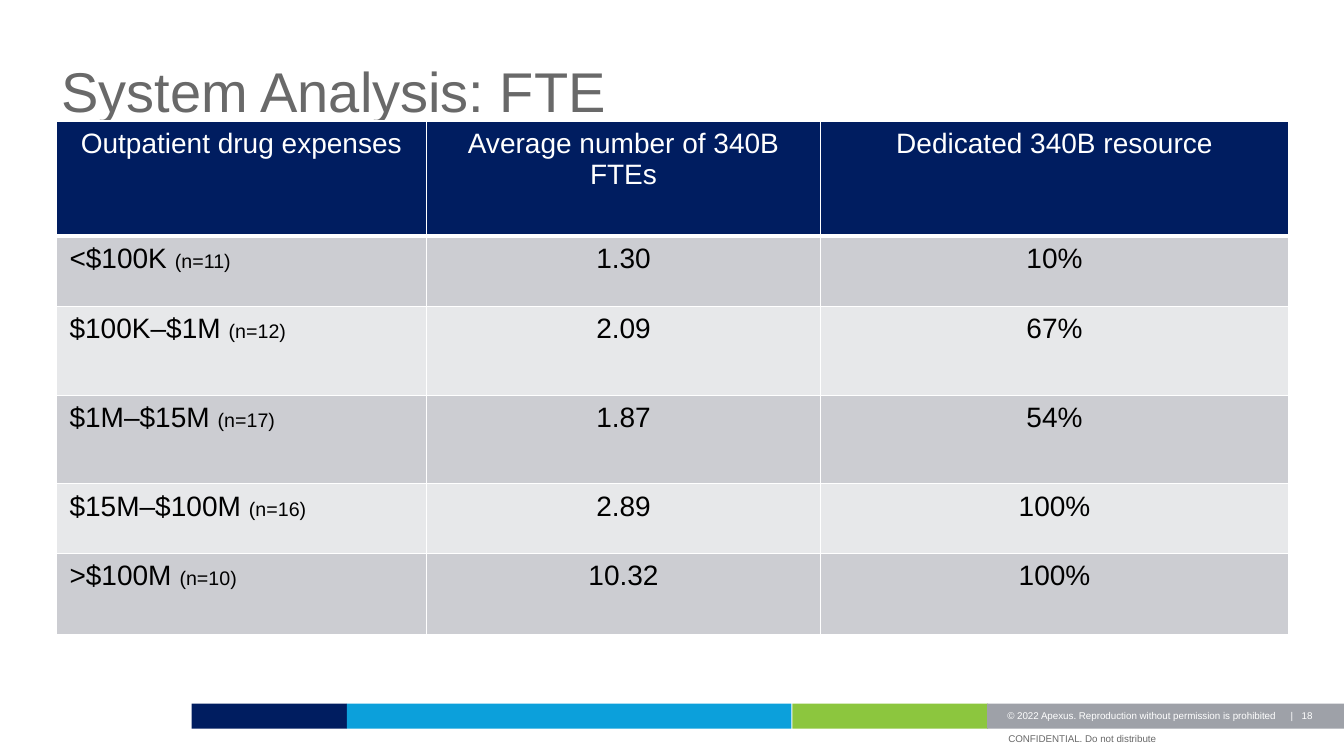
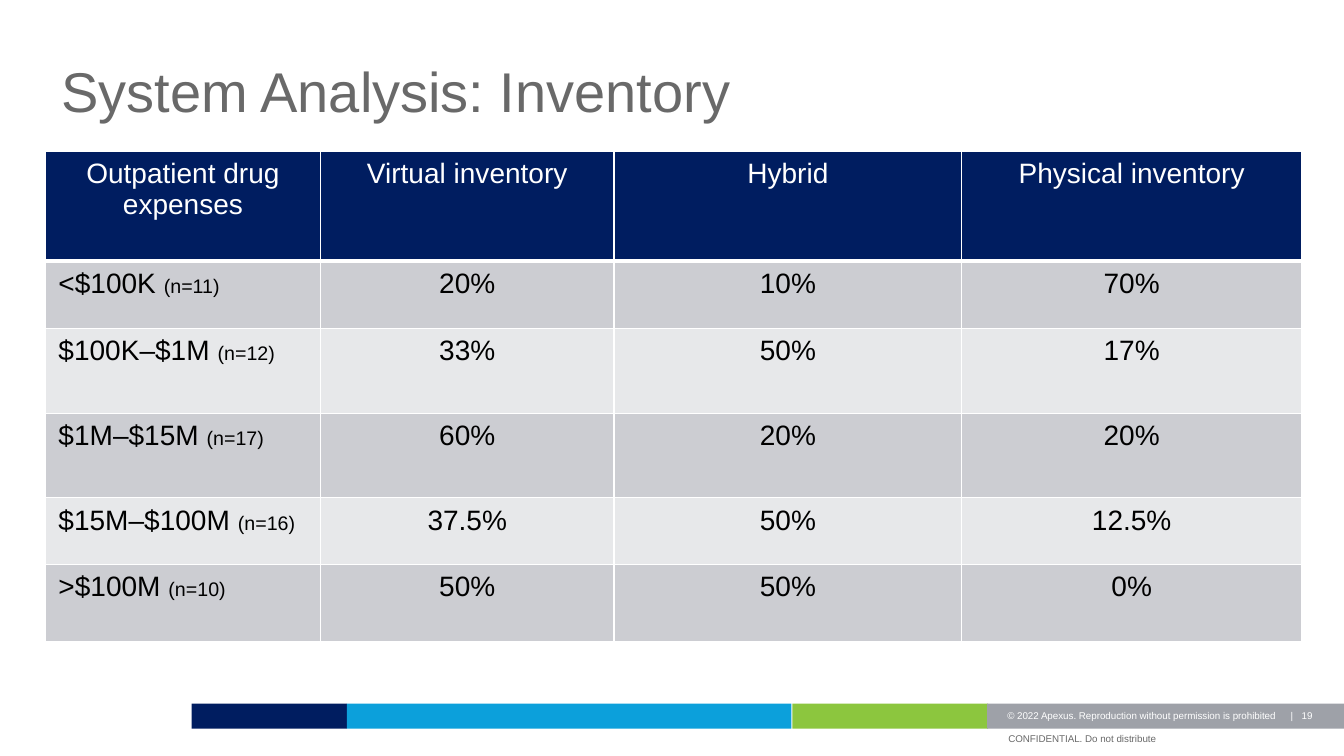
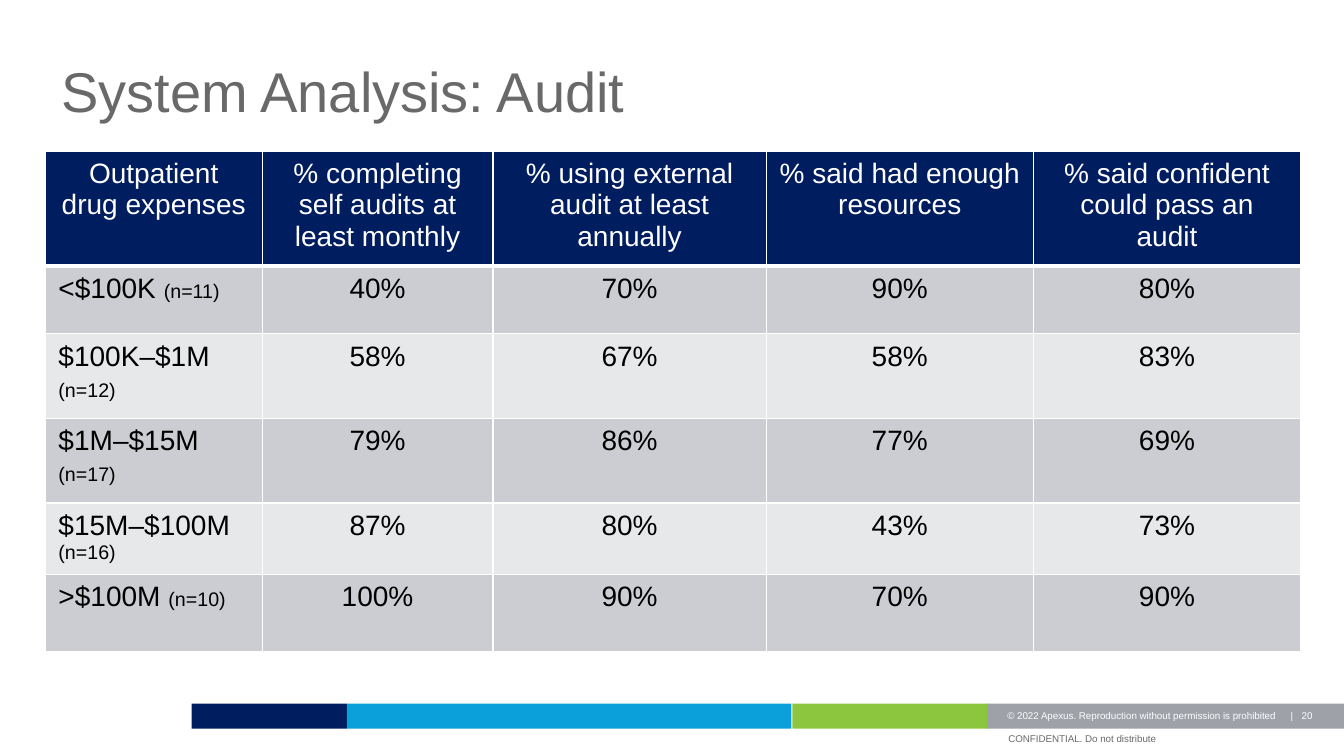
import pptx
import pptx.util
import pptx.dml.color
import pptx.enum.shapes
import pptx.enum.text
import pptx.oxml.ns
from lxml import etree

Inches, Pt = pptx.util.Inches, pptx.util.Pt
ALIGN = pptx.enum.text.PP_ALIGN
ANCHOR = pptx.enum.text.MSO_ANCHOR
qn = pptx.oxml.ns.qn

# Shared look
COLORS = {
    "navy": "001D60", "blue": "0CA0DB", "green": "8CC63E", "gray": "9EA1A8",
    "text": "696969", "white": "FFFFFF", "black": "000000",
    "band_dark": "CCCDD2", "band_light": "E7E8EA",
}
FONT = "Arial"
BANDS = [  # colour, left, width
    ("navy", 1.9, 1.54), ("green", 7.86, 1.94),
    ("blue", 3.44, 4.41), ("gray", 9.79, 3.54),
]
FOOTERS = [  # text, left, top, colour
    ("© 2022 Apexus. Reproduction without permission is prohibited", 9.99, 7, "white"),
    ("CONFIDENTIAL. Do not distribute", 10, 7.23, "text"),
]
FIRST_PAGE = 18

# Content
EXPENSES = [  # range, sample, full-size space after the sample
    ("<$100K ", "(n=11)", ""),
    ("$100K–$1M ", "(n=12)", " "),
    ("$1M–$15M ", "(n=17)", " "),
    ("$15M–$100M ", "(n=16)", ""),
    (">$100M ", "(n=10)", ""),
]
ROW_HEIGHTS = [1.09, 0.67, 0.84, 0.84, 0.66, 0.77]
SLIDES = [
    {
        "title": "System Analysis: FTE",
        "at": (0.56, 1.2),
        "widths": [3.67, 3.91, 4.64],
        "heights": [1.14, 0.7, 0.88, 0.88, 0.69, 0.81],
        "measures": {
            "Average number of 340B FTEs": ["1.30", "2.09", "1.87", "2.89", "10.32"],
            "Dedicated 340B resource": ["10%", "67%", "54%", "100%", "100%"],
        },
    },
    {
        "title": "System Analysis: Inventory",
        "at": (0.45, 1.5),
        "widths": [2.73, 2.91, 3.45, 3.37],
        "heights": ROW_HEIGHTS,
        "measures": {
            "Virtual inventory": ["20%", "33%", "60%", "37.5%", "50%"],
            "Hybrid": ["10%", "50%", "20%", "50%", "50%"],
            "Physical inventory": ["70%", "17%", "20%", "12.5%", "0%"],
        },
    },
    {
        "title": "System Analysis: Audit",
        "at": (0.45, 1.5),
        "widths": [2.15, 2.29, 2.71, 2.65, 2.65],
        "heights": ROW_HEIGHTS,
        "measures": {
            "% completing self audits at least monthly": ["40%", "58%", "79%", "87%", "100%"],
            "% using external audit at least annually": ["70%", "67%", "86%", "80%", "90%"],
            "% said had enough resources": ["90%", "58%", "77%", "43%", "70%"],
            "% said confident could pass an audit": ["80%", "83%", "69%", "73%", "90%"],
        },
    },
]


def rgb(name):
    return pptx.dml.color.RGBColor.from_string(COLORS[name])


def write(frame, *runs, size, color, align=ALIGN.LEFT, spacing=None, tab=None):
    """Fill the first paragraph; a run is a text or a (text, size) pair."""
    paragraph = frame.paragraphs[0]
    paragraph.alignment = align
    if spacing:
        paragraph.line_spacing = spacing
    if tab:
        stops = etree.SubElement(paragraph._p.get_or_add_pPr(), qn("a:tabLst"))
        etree.SubElement(stops, qn("a:tab"), pos=str(Inches(tab)), algn="l")
    for item in runs:
        text, run_size = item if isinstance(item, tuple) else (item, size)
        run = paragraph.add_run()
        run.text = text
        run.font.name = FONT
        run.font.size = Pt(run_size)
        run.font.bold = False
        run.font.color.rgb = rgb(color)


def add_box(slide, left, top, width, height):
    box = slide.shapes.add_textbox(Inches(left), Inches(top), Inches(width), Inches(height))
    box.text_frame.word_wrap = True
    return box


def set_up_layout(layout):
    """Place the title and drop the date, footer and number placeholders."""
    for holder in list(layout.placeholders):
        if holder.placeholder_format.idx:
            layout.shapes.element.remove(holder.element)
        else:
            holder.left, holder.top = Inches(0.51), Inches(0.59)
            holder.width, holder.height = Inches(12.31), Inches(1)


def add_bands(slide, layout):
    """Draw the bands and footers on a slide, then move them to its layout."""
    parts = []
    for color, left, width in BANDS:
        band = slide.shapes.add_shape(
            pptx.enum.shapes.MSO_SHAPE.RECTANGLE,
            Inches(left), Inches(6.98), Inches(width), Inches(0.25))
        band.shadow.inherit = False
        band.fill.solid()
        band.fill.fore_color.rgb = rgb(color)
        band.line.fill.background()
        parts.append(band)
    for text, left, top, color in FOOTERS:
        footer = add_box(slide, left, top, 3.35, 0.16)
        frame = footer.text_frame
        frame.margin_left = frame.margin_right = frame.margin_top = frame.margin_bottom = 0
        frame.vertical_anchor = ANCHOR.BOTTOM
        write(frame, text, size=7, color=color)
        parts.append(footer)
    for part in parts:
        layout.shapes.element.append(part.element)


def set_borders(cell, **widths):
    """Add white borders; they must precede the cell fill."""
    properties = cell._tc.get_or_add_tcPr()
    for side, width in widths.items():
        line = etree.SubElement(properties, qn("a:" + side), w=str(Pt(width)))
        fill = etree.SubElement(line, qn("a:solidFill"))
        etree.SubElement(fill, qn("a:srgbClr"), val=COLORS["white"])


def format_cell(cell, row):
    if row == 0:
        set_borders(cell, lnL=1, lnR=1, lnT=1, lnB=3)
    else:
        set_borders(cell, lnL=1, lnR=1, lnB=1)
    cell.fill.solid()
    cell.fill.fore_color.rgb = rgb(
        "navy" if row == 0 else "band_dark" if row % 2 else "band_light")
    cell.margin_left = cell.margin_right = Inches(0.13)
    cell.margin_top = cell.margin_bottom = Inches(0.07)


def add_results(slide, content):
    widths, heights = content["widths"], content["heights"]
    left, top = content["at"]
    table = slide.shapes.add_table(
        len(heights), len(widths), Inches(left), Inches(top),
        Inches(sum(widths)), Inches(sum(heights))).table
    table.horz_banding = False
    for column, width in zip(table.columns, widths):
        column.width = Inches(width)
    for row, height in zip(table.rows, heights):
        row.height = Inches(height)

    headers = ["Outpatient drug expenses", *content["measures"]]
    records = [headers, *zip(EXPENSES, *content["measures"].values())]
    for r, record in enumerate(records):
        for c, value in enumerate(record):
            cell = table.cell(r, c)
            format_cell(cell, r)
            if r and c == 0:
                expense, sample, space = value
                runs = [expense, (sample, 14)] + ([space] if space else [])
            else:
                runs = [value]
            write(cell.text_frame, *runs, size=20,
                  color="black" if r else "white",
                  align=ALIGN.LEFT if r and c == 0 else ALIGN.CENTER)


def main():
    deck = pptx.Presentation()
    deck.slide_width, deck.slide_height = Inches(13.33), Inches(7.5)
    layout = deck.slide_layouts.get_by_name("Title Only")
    set_up_layout(layout)

    for index, content in enumerate(SLIDES):
        slide = deck.slides.add_slide(layout)
        if index == 0:
            add_bands(slide, layout)

        # Title
        title = slide.shapes.title.text_frame
        title.vertical_anchor = ANCHOR.TOP
        title.auto_size = pptx.enum.text.MSO_AUTO_SIZE.NONE
        write(title, content["title"], size=40, color="text", spacing=0.9)

        # Page number
        page = add_box(slide, 10.82, 6.99, 2.31, 0.22).text_frame
        page.margin_left = Inches(1.98)
        write(page, f"|\t{FIRST_PAGE + index}", size=7, color="white", tab=0.11)

        add_results(slide, content)

    deck.save("out.pptx")


if __name__ == "__main__":
    main()
